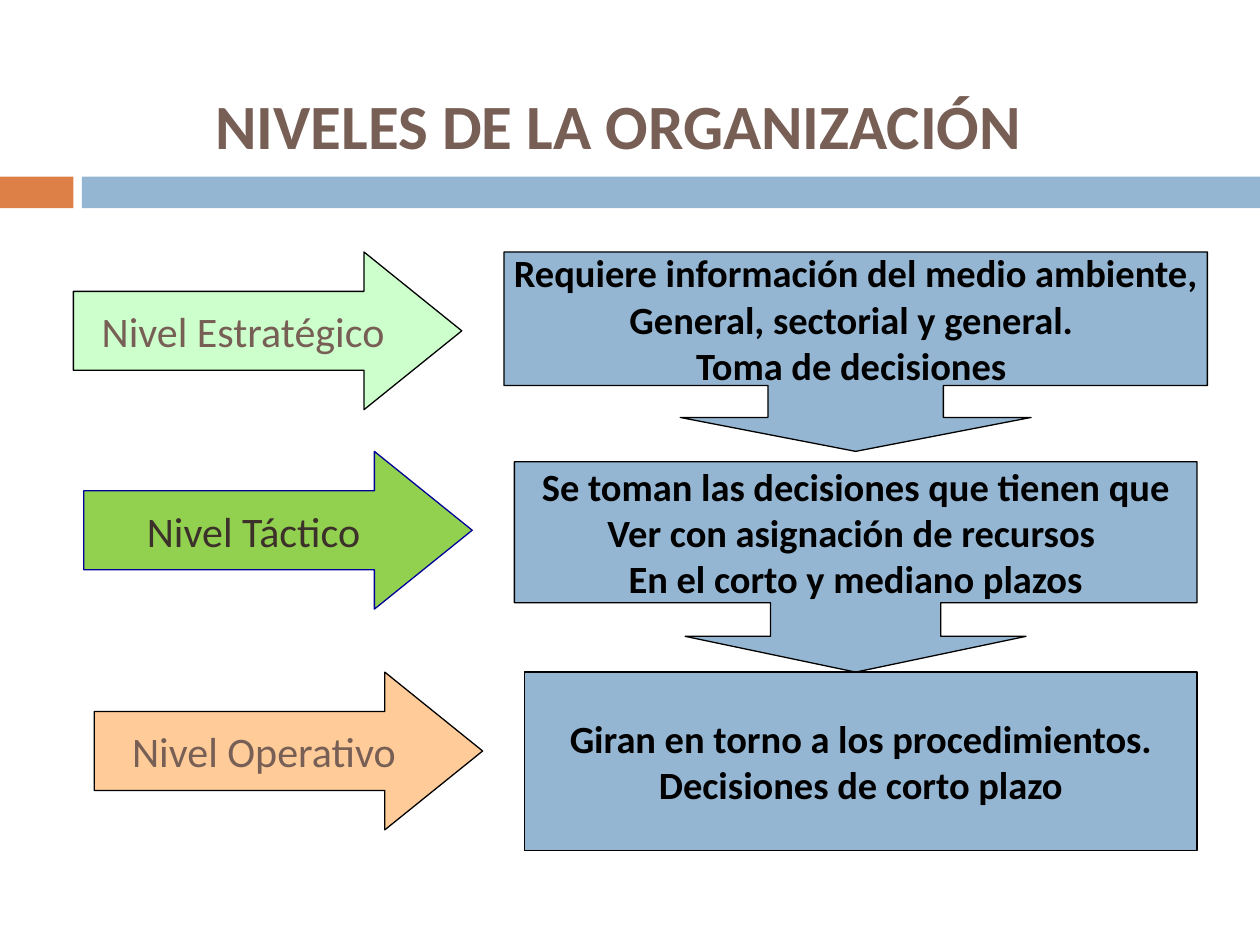
from pptx import Presentation
from pptx.dml.color import RGBColor
from pptx.enum.shapes import MSO_SHAPE as SHAPE
from pptx.enum.text import MSO_ANCHOR as ANCHOR, PP_ALIGN as ALIGN
from pptx.util import Cm, Pt

FONT = "Calibri"
COLORS = {
    "orange": "DD8047", "blue": "94B6D2", "brown": "775F55", "dark": "3C302A",
    "mint": "CCFFCC", "green": "92D050", "peach": "FFCC99",
    "black": "000000", "navy": "000099",
}
LEVELS = [
    dict(box=(1.48, 5.08, 22.86, 4.02), label="Nivel Estratégico",
         fill="mint", line="black", ink="brown",
         detail=(8.68, 0, 14.18, 4.02), adj=(0.88, 0.88, 0.17, 0.67),
         lines=["Requiere información del medio ambiente,",
                "General, sectorial y general. ", "Toma de decisiones "]),
    dict(box=(1.69, 9.1, 22.44, 4.45), label="Nivel Táctico",
         fill="green", line="navy", ink="dark",
         detail=(8.68, 0.21, 13.76, 4.24), adj=(0.81, 0.81, 0.17, 0.67),
         lines=["Se toman las decisiones que tienen que",
                "Ver con asignación de recursos ", "En el corto y mediano plazos"]),
    dict(box=(1.9, 13.55, 22.23, 3.6), label="Nivel Operativo",
         fill="peach", line="black", ink="brown",
         detail=(8.68, 0, 13.55, 3.6), adj=(),
         lines=["Giran en torno a los procedimientos.", "Decisiones de corto plazo"]),
]


def rgb(name):
    """Return the named colour."""
    return RGBColor.from_string(COLORS[name])


def write(tf, lines, size, color, bold):
    """Write centred paragraphs into a text frame."""
    tf.vertical_anchor = ANCHOR.MIDDLE
    for i, line in enumerate(lines):
        p = tf.paragraphs[0] if i == 0 else tf.add_paragraph()
        p.alignment = ALIGN.CENTER
        r = p.add_run()
        r.text = line
        r.font.name, r.font.size, r.font.bold = FONT, Pt(size), bold
        r.font.color.rgb = rgb(color)


def add_block(slide, kind, box, fill, line=None, adj=()):
    """Add a flat filled shape, outlined if a line colour is given."""
    sp = slide.shapes.add_shape(kind, *map(Cm, box))
    sp.shadow.inherit = False
    sp.fill.solid()
    sp.fill.fore_color.rgb = rgb(fill)
    if line:
        sp.line.color.rgb = rgb(line)
        sp.line.width = Pt(0.75)
    else:
        sp.line.fill.background()
    for i, value in enumerate(adj):
        sp.adjustments[i] = value
    sp.text_frame.word_wrap = False
    return sp


def add_header(slide, box):
    """Place the title and the two-colour band under it."""
    x, y, w, h = box
    band, tab, gap = 0.64, 1.48, 0.17
    top = y + h - band
    add_block(slide, SHAPE.RECTANGLE, (x, top, tab, band), "orange")
    add_block(slide, SHAPE.RECTANGLE, (x + tab + gap, top, w - tab - gap, band), "blue")
    title = slide.shapes.title
    title.left, title.top, title.width, title.height = map(Cm, (x + 2.31, y + 0.91, 20.32, 3.2))
    write(title.text_frame, ["NIVELES DE LA ORGANIZACIÓN"], 36, "brown", True)


def add_level(slide, box, level):
    """Place a level's arrow and, beside it, its description."""
    x, y, _, _ = box
    arrow = add_block(slide, SHAPE.RIGHT_ARROW, (x, y, 7.83, 3.18),
                      level["fill"], level["line"], (0.5, 0.62))
    write(arrow.text_frame, [level["label"]], 24, level["ink"], False)
    dx, dy, w, h = level["detail"]
    kind = SHAPE.DOWN_ARROW_CALLOUT if level["adj"] else SHAPE.RECTANGLE
    detail = add_block(slide, kind, (x + dx, y + dy, w, h), "blue", "black", level["adj"])
    write(detail.text_frame, level["lines"], 22, "black", True)


def main():
    """Build and save the slide."""
    prs = Presentation()
    prs.slide_width, prs.slide_height = Cm(25.4), Cm(19.05)
    slide = prs.slides.add_slide(prs.slide_layouts[5])
    add_header(slide, (0, 0, 25.4, 4.2))
    for level in LEVELS:
        add_level(slide, level["box"], level)
    prs.save("out.pptx")


if __name__ == "__main__":
    main()
